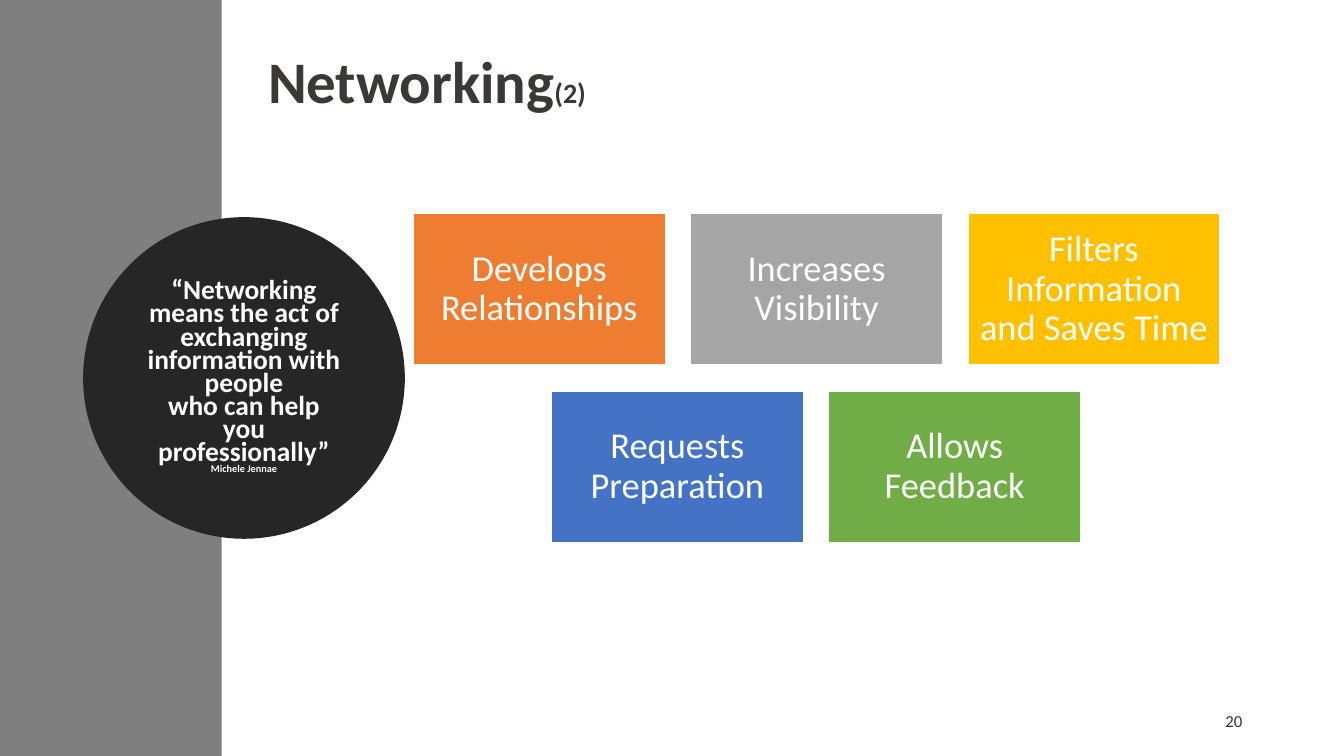
import pptx
import pptx.util
import pptx.dml.color
import pptx.enum.shapes
import pptx.enum.text

Inches = pptx.util.Inches
Align = pptx.enum.text.PP_ALIGN
Shape = pptx.enum.shapes.MSO_SHAPE


def color(value):
    return pptx.dml.color.RGBColor.from_string(value)


def write(shape, paragraphs, align=Align.LEFT, fill="FFFFFF", bold=False, spacing=1.0, inset=None):
    frame = shape.text_frame
    frame.word_wrap = True
    frame.vertical_anchor = pptx.enum.text.MSO_ANCHOR.MIDDLE
    if inset is not None:
        frame.margin_left = frame.margin_right = Inches(inset)
        frame.margin_top = frame.margin_bottom = Inches(inset)
    for index, runs in enumerate(paragraphs):
        paragraph = frame.add_paragraph() if index else frame.paragraphs[0]
        paragraph.alignment = align
        paragraph.line_spacing = spacing
        for text, size in runs:
            run = paragraph.add_run()
            run.text = text
            run.font.name = "Calibri"
            run.font.size = pptx.util.Pt(size)
            run.font.bold = bold
            run.font.color.rgb = color(fill)


presentation = pptx.Presentation()
presentation.slide_width = Inches(13.33)
presentation.slide_height = Inches(7.5)
slide = presentation.slides.add_slide(presentation.slide_layouts[6])

title = slide.shapes.add_textbox(Inches(2.56), Inches(0.46), Inches(7.18), Inches(0.67))
write(title, [[("Networking", 42), ("(2)", 20)]], fill="3B3838", bold=True)

sidebar = slide.shapes.add_shape(Shape.RECTANGLE, 0, 0, Inches(2.2), Inches(7.5))
sidebar.shadow.inherit = False
sidebar.fill.solid()
sidebar.fill.fore_color.rgb = color("7F7F7F")
sidebar.line.fill.background()

circle = slide.shapes.add_shape(Shape.OVAL, Inches(0.92), Inches(2.25), Inches(3), Inches(3))
circle.shadow.inherit = False
circle.fill.solid()
circle.fill.fore_color.rgb = color("262626")
circle.line.color.rgb = color("262626")
circle.line.width = pptx.util.Pt(13.75)
quote = [
    [("“Networking means the act of exchanging information with people", 19.6)],
    [("who can help you professionally” ", 19.6), ("Michele Jennae", 7.3)],
]
write(circle, quote, align=Align.CENTER, bold=True, spacing=0.7)

page_number = slide.shapes.add_textbox(Inches(9.42), Inches(6.95), Inches(3), Inches(0.4))
write(page_number, [[("20", 12)]], align=Align.RIGHT, fill="333333")

card_width, card_height, gap = 2.5, 1.5, 0.25
card_rows = [
    (4.1, 2.12, [
        ("Develops Relationships", "ED7D31"),
        ("Increases Visibility", "A5A5A5"),
        ("Filters Information and Saves Time", "FFC000"),
    ]),
    (5.47, 3.88, [
        ("Requests Preparation", "4472C4"),
        ("Allows Feedback", "70AD47"),
    ]),
]
for row_left, top, cards in card_rows:
    for column, (label, card_fill) in enumerate(cards):
        left = row_left + column * (card_width + gap)
        card = slide.shapes.add_shape(
            Shape.RECTANGLE, Inches(left), Inches(top), Inches(card_width), Inches(card_height))
        card.shadow.inherit = False
        card.fill.solid()
        card.fill.fore_color.rgb = color(card_fill)
        card.line.color.rgb = color("FFFFFF")
        card.line.width = pptx.util.Pt(1)
        write(card, [[(label, 26)]], align=Align.CENTER, spacing=0.9, inset=0.11)

presentation.save("out.pptx")
